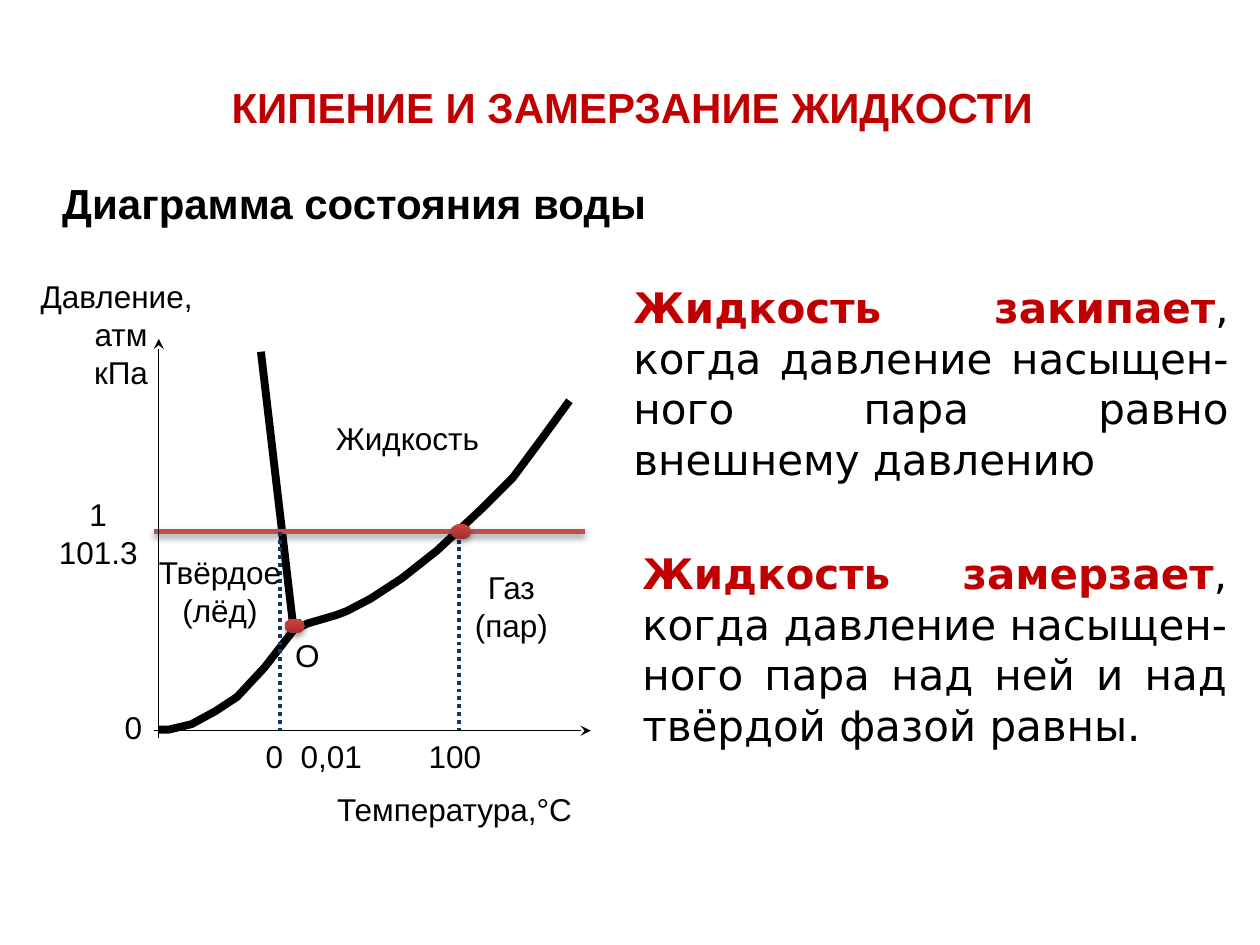
from lxml import etree
from pptx import Presentation
from pptx.dml.color import RGBColor
from pptx.enum import dml, shapes, text
from pptx.oxml import ns
from pptx.util import Cm, Pt

THEME = {
    "black": RGBColor.from_string("000000"),
    "accent": RGBColor.from_string("C00000"),
    "isobar": RGBColor.from_string("C0504D"),
    "guide": RGBColor.from_string("17375E"),
    "dot_dark": RGBColor.from_string("9C2F2D"),
    "dot_light": RGBColor.from_string("CB3E3A"),
    "font": "Arial",
    "body_font": "DejaVu Sans",
    "large": Pt(24),
    "label": Pt(18),
}
SHADOW = (
    f'<a:outerShdw {ns.nsdecls("a")} blurRad="40000" dist="23000" dir="5400000" rotWithShape="0">'
    '<a:srgbClr val="000000"><a:alpha val="35000"/></a:srgbClr></a:outerShdw>'
)

prs = Presentation()
prs.slide_width, prs.slide_height = Cm(25.4), Cm(19.05)
s = prs.slides.add_slide(prs.slide_layouts[6])


def add_text(box, lines, size, align=text.PP_ALIGN.CENTER, font=THEME["font"]):
    """Each line is a list of (wording, colour, bold) runs."""
    tf = s.shapes.add_textbox(*map(Cm, box)).text_frame
    tf.word_wrap = True
    for i, line in enumerate(lines):
        p = tf.add_paragraph() if i else tf.paragraphs[0]
        p.alignment = align
        for wording, color, bold in line:
            r = p.add_run()
            r.text = wording
            r.font.name, r.font.size, r.font.bold = font, size, bold
            r.font.color.rgb = color
    return tf


def add_line(start, end, color, width):
    """Straight line without shadow; returns it with its effect list."""
    ln = s.shapes.add_connector(
        shapes.MSO_CONNECTOR.STRAIGHT, *map(Cm, start + end))
    ln.line.color.rgb = color
    ln.line.width = Pt(width)
    effects = etree.SubElement(ln._element.spPr, ns.qn("a:effectLst"))
    return ln, effects


# Headings
tf = add_text((4.42, 1.52, 16.66, 1.27),
              [[("КИПЕНИЕ И ЗАМЕРЗАНИЕ ЖИДКОСТИ", THEME["accent"], True)]], THEME["large"])
tf.vertical_anchor = text.MSO_ANCHOR.MIDDLE
tf = add_text((0.79, 3.45, 12.7, 1.27),
              [[("Диаграмма состояния воды", THEME["black"], True)]], THEME["large"])
tf.paragraphs[0].space_before = Pt(12)

# Explanations
for box, term, rest in [
    ((12.52, 5.56, 12.5, 4.37), "Жидкость закипает",
     ", когда давление насыщен-ного пара равно внешнему давлению"),
    ((12.7, 10.92, 12.29, 4.37), "Жидкость замерзает",
     ", когда давление насыщен-ного пара над ней и над твёрдой фазой равны."),
]:
    add_text(box, [[(term, THEME["accent"], True), (rest, THEME["black"], False)]],
             THEME["large"], text.PP_ALIGN.JUSTIFY, THEME["body_font"])

# Phase boundaries, meeting at the triple point
triple = (5.92, 12.7)
boiling = [triple, (6.2, 12.57), (6.78, 12.4), (6.99, 12.32), (7.47, 12.07), (8.1, 11.66),
           (8.81, 11.1), (9.73, 10.24), (10.34, 9.63), (10.95, 8.81), (11.48, 8.08)]
sublimation = [(3.2, 14.71), (3.4, 14.71), (3.86, 14.6), (4.34, 14.34), (4.78, 14.05),
               (5.33, 13.46), triple]
for curve in (boiling, sublimation):
    points = [(Cm(x), Cm(y)) for x, y in curve]
    builder = s.shapes.build_freeform(*points[0])
    builder.add_line_segments(points[1:], close=False)
    sp = builder.convert_to_shape()
    sp.shadow.inherit = False
    sp.fill.background()
    sp.line.color.rgb = THEME["black"]
    sp.line.width = Pt(4.5)
add_line(triple, (5.26, 7.09), THEME["black"], 4.5)

# Isobar of normal pressure and temperature guides
isobar_y, axis_x, axis_y = 10.72, 3.2, 14.73
ln, effects = add_line((3.1, isobar_y), (11.79, isobar_y), THEME["isobar"], 3)
effects.append(etree.fromstring(SHADOW))
for x in (5.64, 9.25):
    ln, effects = add_line((x, isobar_y), (x, axis_y), THEME["guide"], 2.25)
    ln.line.dash_style = dml.MSO_LINE.ROUND_DOT

# Axes
for start, end in [((3.1, axis_y), (11.91, axis_y)), ((axis_x, 14.88), (axis_x, 6.83))]:
    ln, effects = add_line(start, end, THEME["black"], 0.75)
    etree.SubElement(ln.line._get_or_add_ln(), ns.qn("a:tailEnd"), type="stealth")

# Diagram labels
for box, lines in [
    ((0.56, 9.86, 2.84, 2.08), ["1", "101.3"]),
    ((0.56, 5.46, 3.76, 2.41), ["Давление, ", "атм", "кПа"]),
    ((2.39, 11.02, 4.09, 2.62), ["Твёрдое", "(лёд)"]),
    ((5.79, 8.33, 4.85, 2.06), ["Жидкость"]),
    ((4.9, 12.7, 2.59, 1.4), ["О"]),
    ((7.62, 14.73, 3.1, 1.85), ["100"]),
    ((5.03, 14.73, 1, 1.85), ["0"]),
    ((5.63, 14.73, 2.1, 1.85), ["0,01"]),
    ((6.5, 15.8, 5.33, 0.99), ["Температура,°С"]),
    ((1.14, 14.15, 3.1, 1.85), ["0"]),
    ((8.76, 11.33, 3.1, 2.06), ["Газ", "(пар)"]),
]:
    add_text(box, [[(line, THEME["black"], False)] for line in lines], THEME["label"])

# Triple point and boiling point
for x, y in [(5.74, 12.47), (9.09, 10.57)]:
    sp = s.shapes.add_shape(shapes.MSO_SHAPE.OVAL, Cm(x), Cm(y), Cm(0.41), Cm(0.3))
    sp.line.fill.background()
    sp.fill.gradient()
    sp.fill.gradient_angle = 90
    dark, light = sp.fill.gradient_stops
    dark.color.rgb, light.color.rgb = THEME["dot_dark"], THEME["dot_light"]
    dark.position, light.position = 0, 0.8
    sp.shadow.inherit = False
    sp._element.spPr.find(ns.qn("a:effectLst")).append(etree.fromstring(SHADOW))

prs.save("out.pptx")
